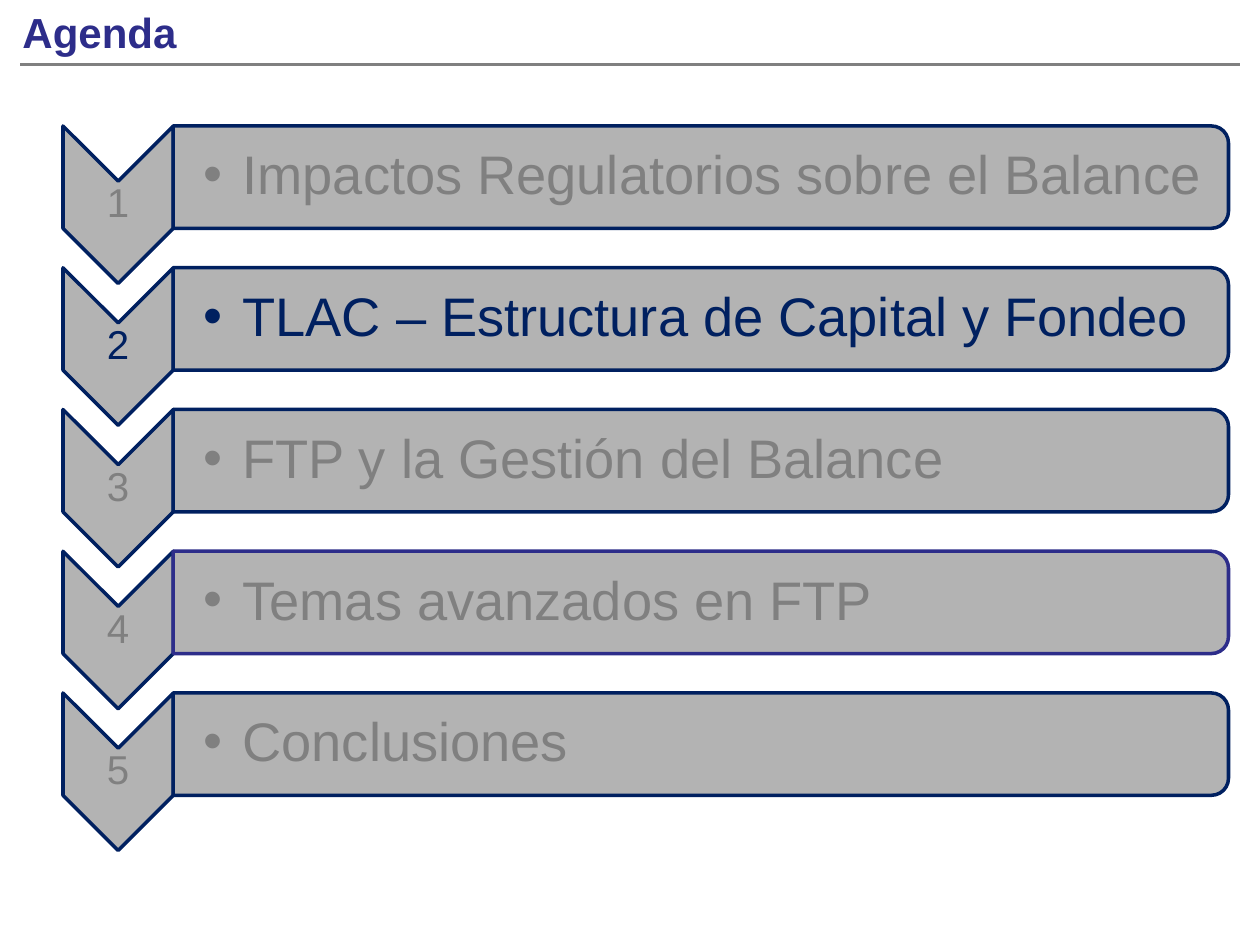
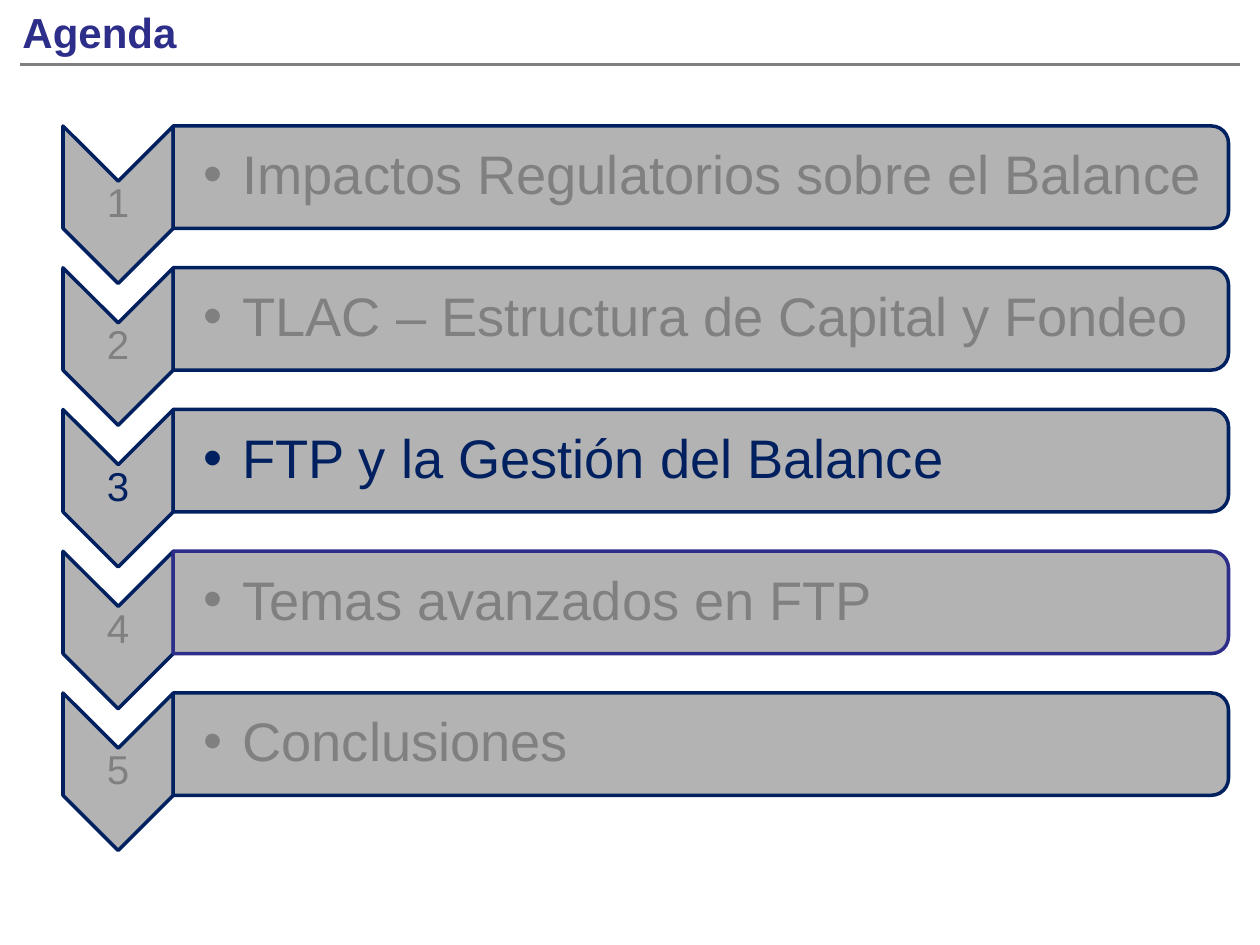
from lxml.etree import SubElement
from pptx import Presentation
from pptx.dml.color import RGBColor
from pptx.enum.shapes import MSO_CONNECTOR, MSO_SHAPE
from pptx.enum.text import MSO_ANCHOR, MSO_AUTO_SIZE, PP_ALIGN
from pptx.oxml.ns import qn
from pptx.util import Inches, Pt

NAVY = RGBColor(0x00, 0x20, 0x60)
INDIGO = RGBColor(0x2D, 0x2D, 0x8A)
GRAY = RGBColor(0x80, 0x80, 0x80)
SILVER = RGBColor(0xB3, 0xB3, 0xB3)

FONT = "Arial"
COLUMNS, ROWS = 80, 60  # square grid cells

TOPICS = [
    "Impactos Regulatorios sobre el Balance",
    "TLAC – Estructura de Capital y Fondeo",
    "FTP y la Gestión del Balance",
    "Temas avanzados en FTP",
    "Conclusiones",
]
INDIGO_EDGED_TOPIC = 4
HIGHLIGHTED_TOPICS = [2, 3]  # one slide for each

FIRST_ROW, TOPIC_PITCH = 8, 9
CHEVRON_LEFT, CHEVRON_WIDTH, CHEVRON_HEIGHT = 4, 7, 10
NUMBER_DROP, NUMBER_HEIGHT = 3.5, 3
BAND_LEFT = CHEVRON_LEFT + CHEVRON_WIDTH
BAND_WIDTH, BAND_HEIGHT, BAND_INSET = 67, 6.5, 0.32
RULE_ROW, RULE_MARGIN = 4.1, 1.3
TITLE_LEFT, TITLE_WIDTH = 0.64, 64.64

THIN_MARGINS = {side: Inches(0.02) for side in
                ("margin_left", "margin_top", "margin_right", "margin_bottom")}
CENTERED_FRAME = {**THIN_MARGINS, "vertical_anchor": MSO_ANCHOR.MIDDLE}
TITLE_STYLE = {
    "frame": {"auto_size": MSO_AUTO_SIZE.SHAPE_TO_FIT_TEXT},
    "paragraph": {},
    "font": {"size": Pt(24), "bold": True},
}
NUMBER_STYLE = {
    "frame": CENTERED_FRAME,
    "paragraph": {"alignment": PP_ALIGN.CENTER, "line_spacing": 0.9,
                  "space_after": Pt(8)},
    "font": {"size": Pt(23)},
}
TOPIC_STYLE = {
    "frame": {**CENTERED_FRAME, "margin_left": Inches(0.24)},
    "paragraph": {"level": 1, "line_spacing": 0.9, "space_after": Pt(4.65)},
    "font": {"size": Pt(31)},
}


def apply_format(target, values):
    for attribute, value in values.items():
        setattr(target, attribute, value)


class AgendaDeck:
    def __init__(self):
        self.deck = Presentation()
        self.deck.slide_width, self.deck.slide_height = Inches(10), Inches(7.5)
        self.slide = None

    def place(self, left, top, width, height):
        """Turn grid columns and rows into slide lengths."""
        column = self.deck.slide_width / COLUMNS
        row = self.deck.slide_height / ROWS
        return (round(left * column), round(top * row),
                round(width * column), round(height * row))

    def new_slide(self):
        self.slide = self.deck.slides.add_slide(self.deck.slide_layouts[6])

    def turned_shape(self, preset, left, top, width, height, edge):
        """Add a shape turned by 90 degrees; the box is the one it fills once turned."""
        x, y, w, h = self.place(left, top, width, height)
        shift = (w - h) // 2
        shape = self.slide.shapes.add_shape(preset, x + shift, y - shift, h, w)
        shape.rotation = 90
        shape.shadow.inherit = False
        shape.fill.solid()
        shape.fill.fore_color.rgb = SILVER
        shape.line.color.rgb = edge
        shape.line.width = Pt(2)

    def text(self, words, left, top, width, height, style, color):
        box = self.slide.shapes.add_textbox(*self.place(left, top, width, height))
        frame = box.text_frame
        frame.word_wrap = True
        paragraph = frame.paragraphs[0]
        run = paragraph.add_run()
        run.text = words
        apply_format(frame, style["frame"])
        apply_format(paragraph, style["paragraph"])
        apply_format(run.font, {"name": FONT, **style["font"]})
        run.font.color.rgb = color
        return paragraph

    def bullet(self, paragraph):
        properties = paragraph._p.get_or_add_pPr()
        indent = Inches(0.31)
        properties.set("marL", str(indent))
        properties.set("indent", str(-indent))
        SubElement(properties, qn("a:buFont"), typeface=FONT)
        SubElement(properties, qn("a:buChar"), char="•")

    def rule(self):
        x, y, width, _ = self.place(RULE_MARGIN, RULE_ROW,
                                    COLUMNS - 2 * RULE_MARGIN, 0)
        line = self.slide.shapes.add_connector(
            MSO_CONNECTOR.STRAIGHT, x + width, y, x, y)
        line.line.color.rgb = GRAY
        line.line.width = Pt(1.25)
        SubElement(line._element.spPr, qn("a:effectLst"))

    def title(self, words):
        self.rule()
        self.text(words, TITLE_LEFT, 0, TITLE_WIDTH, RULE_ROW, TITLE_STYLE, INDIGO)

    def topic(self, number, words, highlighted):
        top = FIRST_ROW + (number - 1) * TOPIC_PITCH
        color = NAVY if highlighted else GRAY
        band_edge = INDIGO if number == INDIGO_EDGED_TOPIC else NAVY
        self.turned_shape(MSO_SHAPE.CHEVRON, CHEVRON_LEFT, top,
                          CHEVRON_WIDTH, CHEVRON_HEIGHT, NAVY)
        self.text(str(number), CHEVRON_LEFT, top + NUMBER_DROP,
                  CHEVRON_WIDTH, NUMBER_HEIGHT, NUMBER_STYLE, color)
        self.turned_shape(MSO_SHAPE.ROUND_2_SAME_RECTANGLE, BAND_LEFT, top,
                          BAND_WIDTH, BAND_HEIGHT, band_edge)
        self.bullet(self.text(words, BAND_LEFT, top + BAND_INSET,
                              BAND_WIDTH - BAND_INSET, BAND_HEIGHT - 2 * BAND_INSET,
                              TOPIC_STYLE, color))

    def agenda(self, highlighted_topic):
        self.new_slide()
        for number, words in enumerate(TOPICS, start=1):
            self.topic(number, words, number == highlighted_topic)
        self.title("Agenda")


def main():
    agenda_deck = AgendaDeck()
    for highlighted_topic in HIGHLIGHTED_TOPICS:
        agenda_deck.agenda(highlighted_topic)
    agenda_deck.deck.save("out.pptx")


if __name__ == "__main__":
    main()
